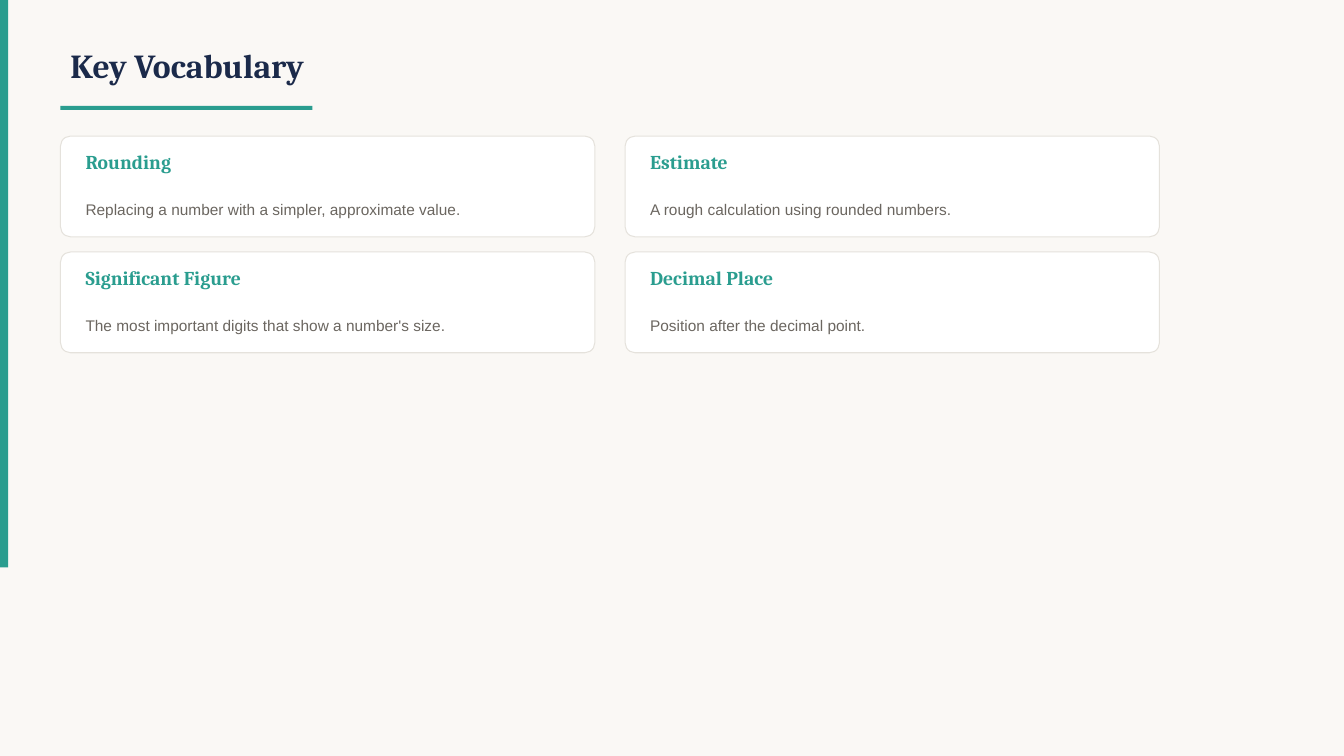
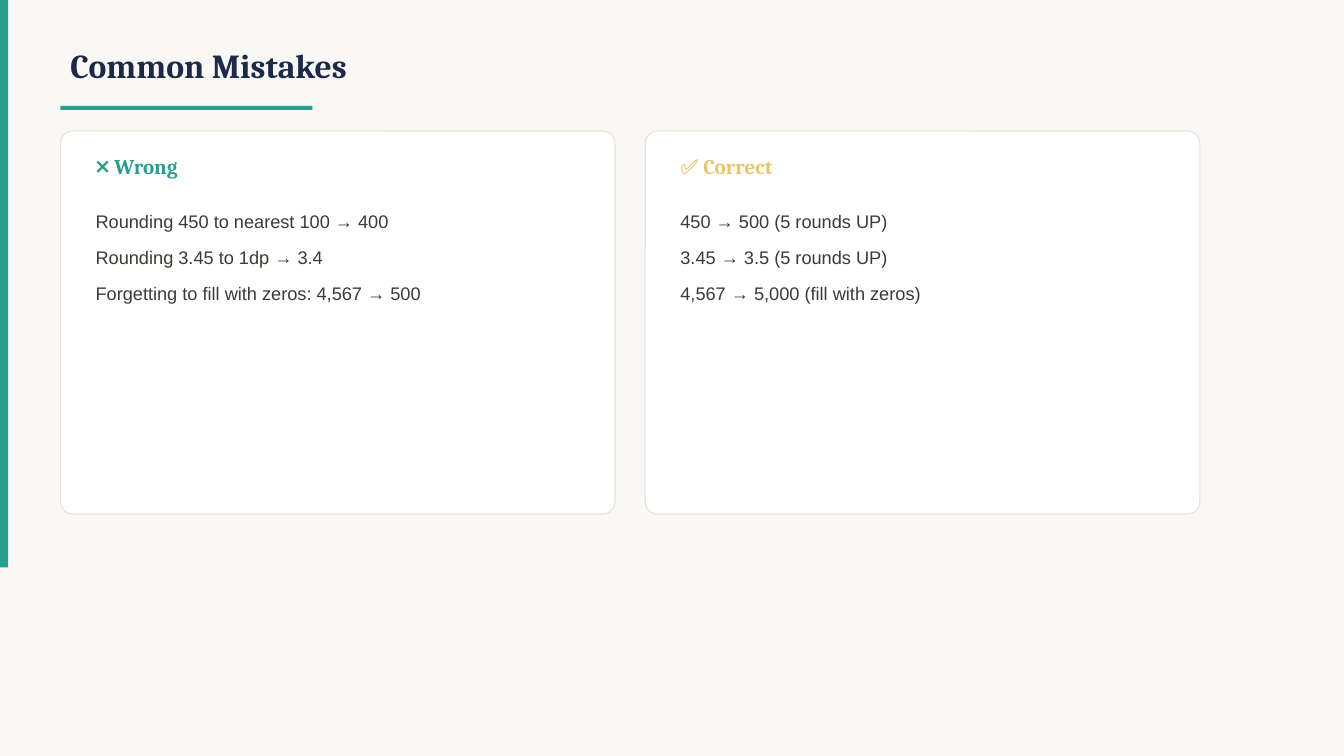
from pptx import Presentation
from pptx import util as u
from pptx.dml.color import RGBColor
from pptx.enum import shapes, text

TEAL, NAVY, GOLD = "2A9D8F", "1B2A4A", "E9C46A"
CREAM, WHITE, BORDER = "FAF8F5", "FFFFFF", "E5E2DC"
INK, MUTED = "3D3A36", "6B6660"
HEAD, BODY = "Cambria", "Arial"
LEFT = 0.6


def rgb(value):
    return RGBColor.from_string(value)


class Deck:
    """Holds the shared style and the slide being built."""

    def __init__(self):
        self.prs = Presentation()
        self.prs.slide_width = u.Inches(13.33)
        self.prs.slide_height = u.Inches(7.5)
        self.s = None

    def slide(self, title):
        self.s = self.prs.slides.add_slide(self.prs.slide_layouts[6])
        fill = self.s.background.fill
        fill.solid()
        fill.fore_color.rgb = rgb(CREAM)
        self.shape(0, 0, 0.08, 5.63, TEAL)
        self.text(LEFT, 0.3, 10, 0.7, [title], 24, NAVY)
        self.shape(LEFT, 1.05, 2.5, 0.04, TEAL)

    def shape(self, x, y, w, h, color, kind=shapes.MSO_SHAPE.RECTANGLE):
        sp = self.s.shapes.add_shape(kind, *map(u.Inches, (x, y, w, h)))
        sp.shadow.inherit = False
        sp.fill.solid()
        sp.fill.fore_color.rgb = rgb(color)
        sp.line.fill.background()
        return sp

    def card(self, x, y, w, h, radius):
        sp = self.shape(x, y, w, h, WHITE, shapes.MSO_SHAPE.ROUNDED_RECTANGLE)
        sp.adjustments[0] = radius
        sp.line.color.rgb = rgb(BORDER)
        sp.line.width = u.Pt(0.75)

    def text(self, x, y, w, h, lines, size, color, font=HEAD, spacing=None,
             after=None, anchor=text.MSO_ANCHOR.MIDDLE):
        sp = self.s.shapes.add_textbox(*map(u.Inches, (x, y, w, h)))
        tf = sp.text_frame
        tf.word_wrap = True
        tf.vertical_anchor = anchor
        tf.text = "\n".join(lines)
        for p in tf.paragraphs:
            p.line_spacing = spacing
            if after is not None:
                p.space_after = u.Pt(after)
            for r in p.runs:
                r.font.name = font
                r.font.size = u.Pt(size)
                r.font.bold = font == HEAD
                r.font.color.rgb = rgb(color)

    def term(self, x, y, word, meaning):
        self.card(x, y, 5.3, 1, 0.1)
        self.text(x + 0.15, y + 0.08, 5, 0.35, [word], 14, TEAL)
        self.text(x + 0.15, y + 0.45, 5, 0.5, [meaning], 11, MUTED, BODY, 1.3)

    def panel(self, x, y, heading, color, lines):
        self.card(x, y, 5.5, 3.8, 0.032)
        self.text(x + 0.25, y + 0.15, 5, 0.4, [heading], 15, color)
        self.text(x + 0.25, y + 0.65, 5, 2.9, lines, 13, INK, BODY, 1.4, 4,
                  text.MSO_ANCHOR.TOP)


def main():
    deck = Deck()

    deck.slide("Key Vocabulary")
    terms = [
        ("Rounding", "Replacing a number with a simpler, approximate value."),
        ("Estimate", "A rough calculation using rounded numbers."),
        ("Significant Figure",
         "The most important digits that show a number's size."),
        ("Decimal Place", "Position after the decimal point."),
    ]
    for i, (word, meaning) in enumerate(terms):
        row, col = divmod(i, 2)
        deck.term(LEFT + col * 5.6, 1.35 + row * 1.15, word, meaning)

    deck.slide("Common Mistakes")
    panels = [
        ("❌ Wrong", TEAL, [
            "Rounding 450 to nearest 100 → 400",
            "Rounding 3.45 to 1dp → 3.4",
            "Forgetting to fill with zeros: 4,567 → 500",
        ]),
        ("✅ Correct", GOLD, [
            "450 → 500 (5 rounds UP)",
            "3.45 → 3.5 (5 rounds UP)",
            "4,567 → 5,000 (fill with zeros)",
        ]),
    ]
    for col, (heading, color, lines) in enumerate(panels):
        deck.panel(LEFT + col * 5.8, 1.3, heading, color, lines)

    deck.prs.save("out.pptx")


if __name__ == "__main__":
    main()
